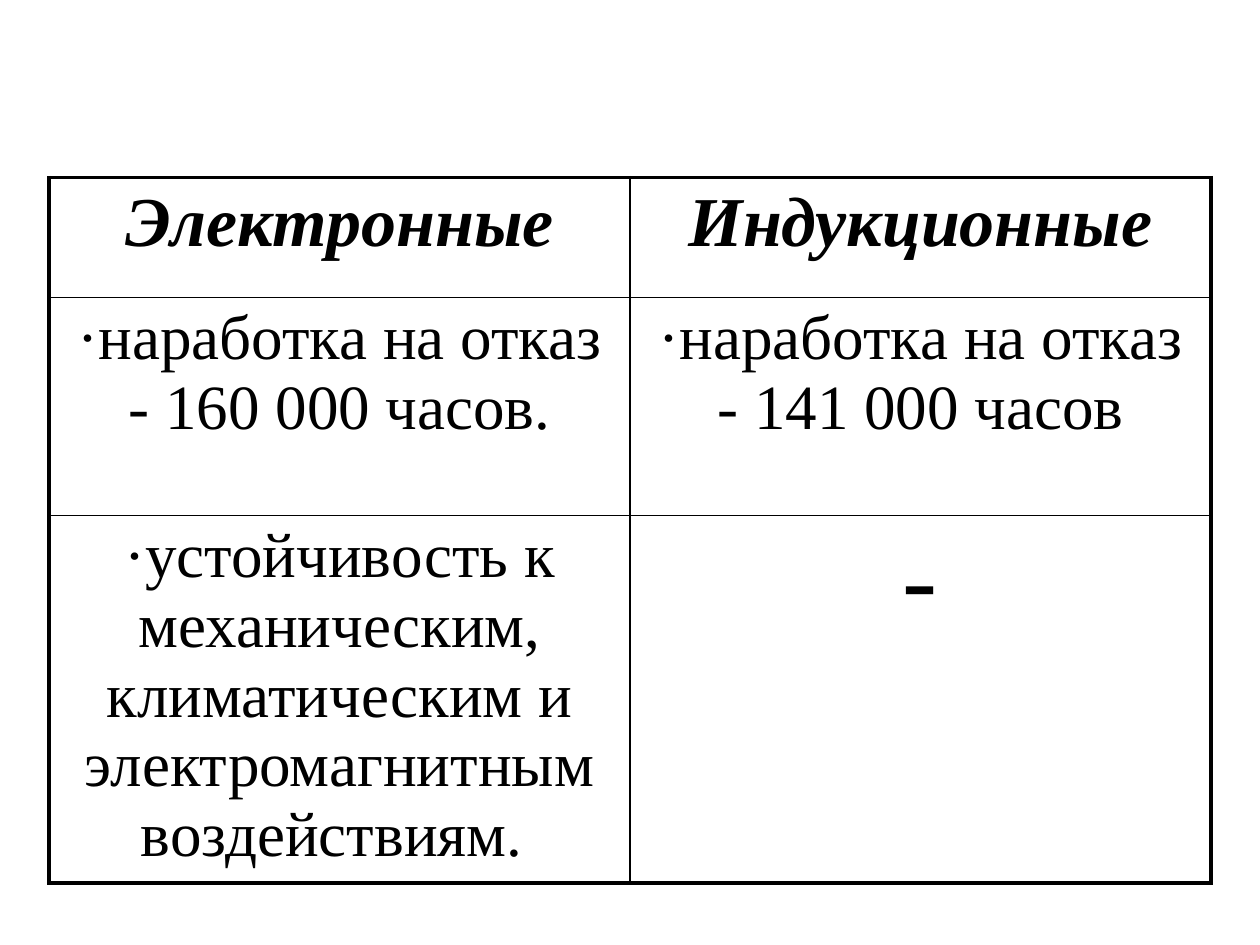
from pptx import Presentation
from pptx.dml.color import RGBColor
from pptx.enum.text import PP_ALIGN
from pptx.oxml.ns import qn
from pptx.util import Inches, Pt
from lxml.etree import SubElement

BLACK = RGBColor(0, 0, 0)
FONT = "Times New Roman"
OUTER, INNER = Pt(2.25), Pt(1)

# Each cell: text, size in points, bold italic
ROWS = [
    [("Электронные", 40, True), ("Индукционные", 40, True)],
    [("·наработка на отказ - 160 000 часов.", 36, False),
     ("·наработка на отказ - 141 000 часов", 36, False)],
    [("·устойчивость к механическим, климатическим и "
      "электромагнитным воздействиям. ", 36, False), ("-", 60, False)],
]
HEIGHTS = [0.95, 1.73, 2.92]
LEFT, TOP, WIDTH = 0.39, 1.41, 9.22


def add_border(cell, side, width):
    line = SubElement(cell._tc.get_or_add_tcPr(), qn(f"a:{side}"), w=str(width))
    fill = SubElement(line, qn("a:solidFill"))
    SubElement(fill, qn("a:srgbClr"), val=str(BLACK))


def fill_cell(cell, text, size, strong):
    para = cell.text_frame.paragraphs[0]
    para.alignment = PP_ALIGN.CENTER
    run = para.add_run()
    run.text = text
    font = run.font
    font.name, font.size = FONT, Pt(size)
    font.bold = font.italic = strong
    font.color.rgb = BLACK


def main():
    deck = Presentation()
    deck.slide_width, deck.slide_height = Inches(10), Inches(7.5)
    slide = deck.slides.add_slide(deck.slide_layouts[6])

    count, cols = len(ROWS), len(ROWS[0])
    table = slide.shapes.add_table(
        count, cols, Inches(LEFT), Inches(TOP),
        Inches(WIDTH), Inches(sum(HEIGHTS))).table
    table.first_row = table.horz_banding = False

    for r, (row, height) in enumerate(zip(ROWS, HEIGHTS)):
        table.rows[r].height = Inches(height)
        for c, content in enumerate(row):
            cell = table.cell(r, c)
            fill_cell(cell, *content)
            edges = {"lnL": c == 0, "lnR": c == cols - 1,
                     "lnT": r == 0, "lnB": r == count - 1}
            for side, outer in edges.items():
                add_border(cell, side, OUTER if outer else INNER)
            cell.fill.background()

    deck.save("out.pptx")


if __name__ == "__main__":
    main()
